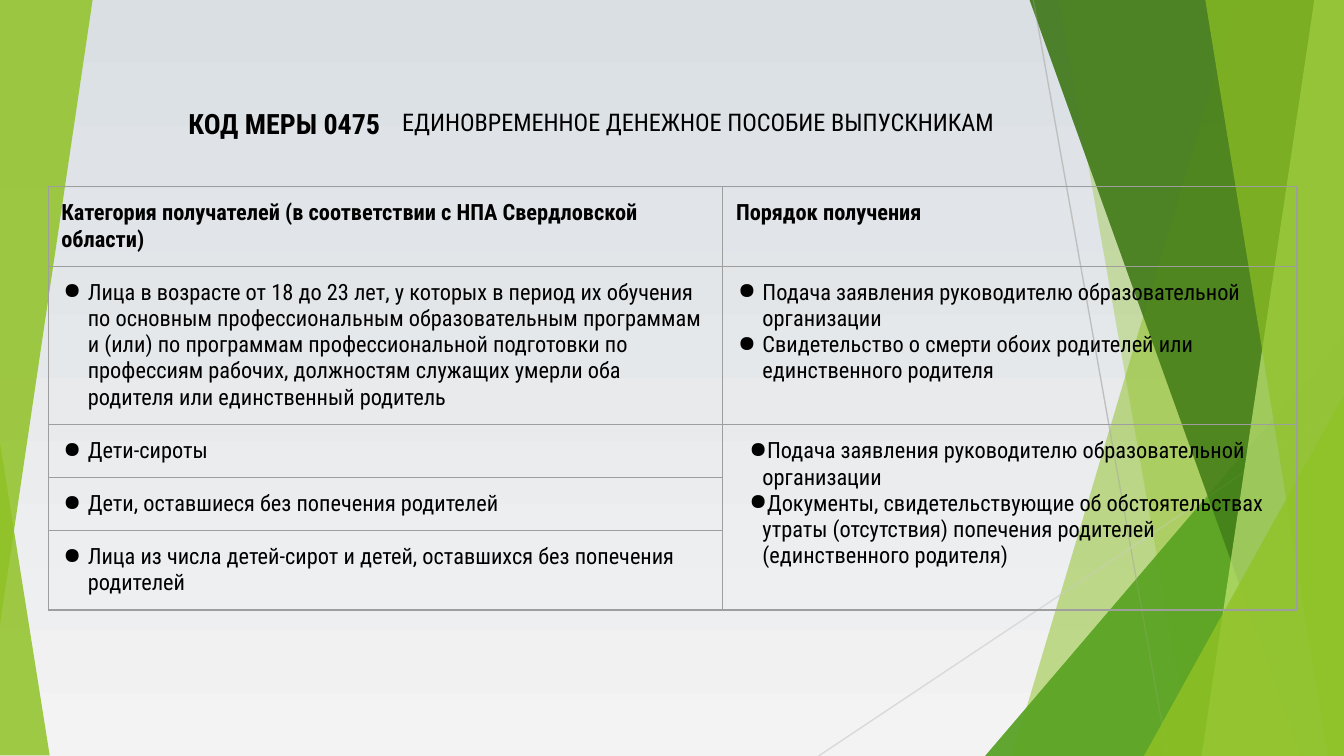
from lxml.etree import SubElement
from pptx import Presentation
from pptx.dml.color import RGBColor
from pptx.enum.shapes import MSO_CONNECTOR, MSO_SHAPE
from pptx.enum.text import MSO_ANCHOR as ANCHOR, MSO_AUTO_SIZE as AUTO, PP_ALIGN as ALIGN
from pptx.oxml.ns import qn
from pptx.util import Cm, Pt

W, H = 25.4, 14.29
FONT = "Roboto Condensed"
BANDS = [(23.39, 19.13, "90C226", 30), (20.02, 22.53, "90C226", 20)]
FRONT_BANDS = [(19.46, 24.59, "3F7819", 70), (24.84, 22.71, "C0E474", 70),
               (22.78, 25.1, "90C226", 65)]
HEADERS = ["Категория получателей (в соответствии с НПА Свердловской области)",
           "Порядок получения"]
APPLICATION = "Подача заявления руководителю образовательной организации"
CATEGORIES = [
    "Лица в возрасте от 18 до 23 лет, у которых в период их обучения по основным "
    "профессиональным образовательным программам и (или) по программам "
    "профессиональной подготовки по профессиям рабочих, должностям служащих "
    "умерли оба родителя или единственный родитель",
    "Дети-сироты",
    "Дети, оставшиеся без попечения родителей",
    "Лица из числа детей-сирот и детей, оставшихся без попечения родителей",
]
ORPHAN_STEPS = [APPLICATION, "Свидетельство о смерти обоих родителей или единственного родителя"]
CARE_STEPS = [APPLICATION, "Документы, свидетельствующие об обстоятельствах утраты "
              "(отсутствия) попечения родителей (единственного родителя)"]


def rgb(color):
    """Turn a hex string into a colour."""
    return RGBColor.from_string(color)


def add_bullet(p, indent):
    """Give a paragraph a round black bullet and a hanging indent."""
    pPr = p._p.get_or_add_pPr()
    pPr.set("marL", str(Cm(indent)))
    pPr.set("indent", str(Cm(-0.46)))
    SubElement(SubElement(pPr, qn("a:buClr")), qn("a:srgbClr"), val="000000")
    SubElement(pPr, qn("a:buChar"), char="●")


def write(tf, *lines, size=12, bold=False, align=ALIGN.LEFT, spacing=None, indent=None):
    """Fill a text frame with one paragraph per line."""
    for i, line in enumerate(lines):
        p = tf.paragraphs[0] if i == 0 else tf.add_paragraph()
        p.alignment = align
        if spacing:
            p.line_spacing = spacing
        if indent is not None:
            add_bullet(p, indent)
        r = p.add_run()
        r.text = line
        r.font.name, r.font.size, r.font.bold = FONT, Pt(size), bold
        r.font.color.rgb = rgb("000000")


def set_frame(tf, x_inset, y_inset):
    """Wrap and centre a text frame vertically within its insets."""
    tf.word_wrap, tf.auto_size, tf.vertical_anchor = True, AUTO.NONE, ANCHOR.MIDDLE
    tf.margin_left = tf.margin_right = Cm(x_inset)
    tf.margin_top = tf.margin_bottom = Cm(y_inset)


def paint(sp, color, opacity):
    """Fill a shape with a translucent colour and drop its outline."""
    sp.shadow.inherit = False
    sp.line.fill.background()
    sp.fill.solid()
    sp.fill.fore_color.rgb = rgb(color)
    clr = sp.fill._xPr.find(".//" + qn("a:srgbClr"))
    SubElement(clr, qn("a:alpha"), val=str(opacity * 1000))


def add_band(s, top, bottom, color, opacity):
    """Draw a band from a slanted left edge to the right slide edge."""
    fb = s.shapes.build_freeform(Cm(top), 0)
    fb.add_line_segments([(Cm(x), Cm(y)) for x, y in [(W, 0), (W, H), (bottom, H)]])
    paint(fb.convert_to_shape(), color, opacity)


def add_triangle(s, x, y, w, h, color, opacity, apex=1, rotation=0):
    """Draw a right triangle with its apex at one end of the base."""
    sp = s.shapes.add_shape(MSO_SHAPE.ISOSCELES_TRIANGLE, Cm(x), Cm(y), Cm(w), Cm(h))
    sp.adjustments[0] = apex
    sp.rotation = rotation
    paint(sp, color, opacity)


def add_line(s, x1, y1, x2, y2, color):
    """Draw a thin straight line."""
    c = s.shapes.add_connector(MSO_CONNECTOR.STRAIGHT, Cm(x1), Cm(y1), Cm(x2), Cm(y2))
    c.line.color.rgb = rgb(color)
    c.line.width = Pt(0.75)
    SubElement(c._element.spPr, qn("a:effectLst"))


def add_right_facets(s):
    """Draw one layer of the green facets on the right."""
    for band in BANDS:
        add_band(s, *band)
    add_triangle(s, 18.62, 6.35, 6.78, 7.94, "54A021", 72)
    for band in FRONT_BANDS:
        add_band(s, *band)
    add_triangle(s, 21.62, 7.47, 3.78, 6.82, "90C226", 80)


def add_backdrop(s):
    """Set the gradient background and draw the facets and lines."""
    fill = s.background.fill
    fill.gradient()
    fill.gradient_angle = 270
    for stop, color, position in zip(fill.gradient_stops, ("DADFE4", "F3F3F3"), (0, 1)):
        stop.color.rgb = rgb(color)
        stop.position = position
    add_right_facets(s)
    add_triangle(s, 0, 8.36, 0.94, 5.92, "90C226", 85, apex=0)
    add_line(s, 19.53, 0, 22.07, H, "BFBFBF")
    add_line(s, W, 7.67, 15.47, H, "D9D9D9")
    add_right_facets(s)
    add_triangle(s, 0, 0, 1.75, 11.81, "90C226", 85, rotation=180)


def style_cell(cell):
    """Clear a cell's fill and give it insets and grey borders."""
    cell.fill.background()
    cell.margin_left = cell.margin_right = Cm(0.25)
    cell.margin_top = cell.margin_bottom = Cm(0.25)
    tcPr = cell._tc.get_or_add_tcPr()
    for i, side in enumerate(("lnL", "lnR", "lnT", "lnB")):
        ln = SubElement(tcPr, qn("a:" + side), w=str(Pt(0.75)))
        SubElement(SubElement(ln, qn("a:solidFill")), qn("a:srgbClr"), val="9E9E9E")
        tcPr.insert(i, ln)


def add_measures_table(s):
    """Add the table of recipients and procedures."""
    widths, heights = [12.75, 10.85], [1.5, 3, 1, 1, 1.5]
    table = s.shapes.add_table(len(heights), len(widths), Cm(0.91), Cm(3.53),
                               Cm(sum(widths)), Cm(sum(heights))).table
    table.first_row = table.horz_banding = False
    for col, width in zip(table.columns, widths):
        col.width = Cm(width)
    for row, height in zip(table.rows, heights):
        row.height = Cm(height)
    for cell in table.iter_cells():
        style_cell(cell)
    for col, header in enumerate(HEADERS):
        write(table.cell(0, col).text_frame, header, bold=True)
    for row, category in enumerate(CATEGORIES, 1):
        write(table.cell(row, 0).text_frame, category, indent=0.5)
    write(table.cell(1, 1).text_frame, *ORPHAN_STEPS, indent=0.5)
    care = table.cell(2, 1)
    care.merge(table.cell(4, 1))
    care.margin_left = Cm(0.5)
    write(care.text_frame, *CARE_STEPS, indent=0.25)


def add_code(s):
    """Add the measure code beside the title."""
    tf = s.shapes.add_textbox(Cm(2.08), Cm(1.35), Cm(5.36), Cm(1.96)).text_frame
    set_frame(tf, 0.25, 0.25)
    write(tf, "КОД МЕРЫ 0475", size=15, bold=True, align=ALIGN.RIGHT)


def place_title(s):
    """Place the title in front of the backdrop and fill it."""
    sp = s.shapes.title
    s.shapes._spTree.append(sp._element)
    sp.left, sp.top, sp.width, sp.height = Cm(7.42), Cm(1.35), Cm(16), Cm(1.96)
    set_frame(sp.text_frame, 0.18, 0.1)
    write(sp.text_frame, "ЕДИНОВРЕМЕННОЕ ДЕНЕЖНОЕ ПОСОБИЕ ВЫПУСКНИКАМ", size=13, spacing=0.9)


def main():
    """Build the slide and save it."""
    prs = Presentation()
    prs.slide_width, prs.slide_height = Cm(W), Cm(H)
    s = prs.slides.add_slide(prs.slide_layouts[5])
    add_backdrop(s)
    add_code(s)
    add_measures_table(s)
    place_title(s)
    prs.save("out.pptx")


if __name__ == "__main__":
    main()
